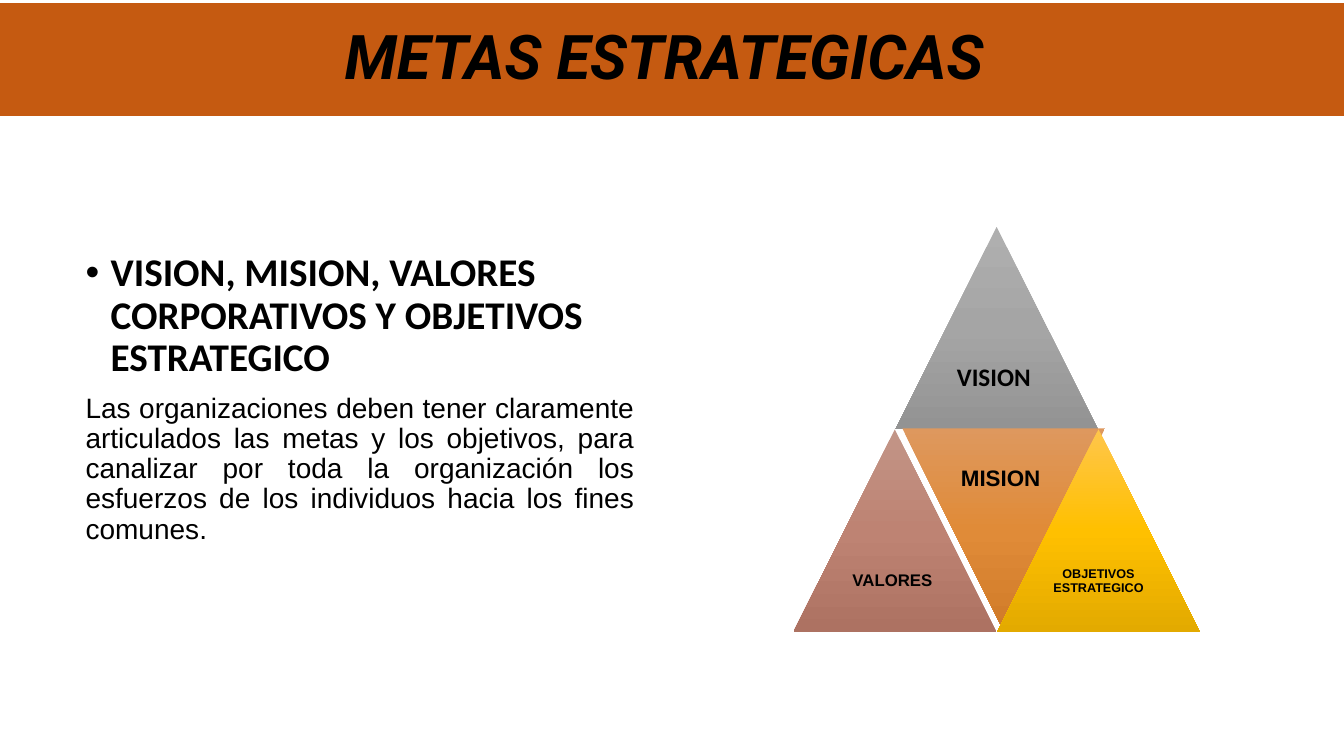
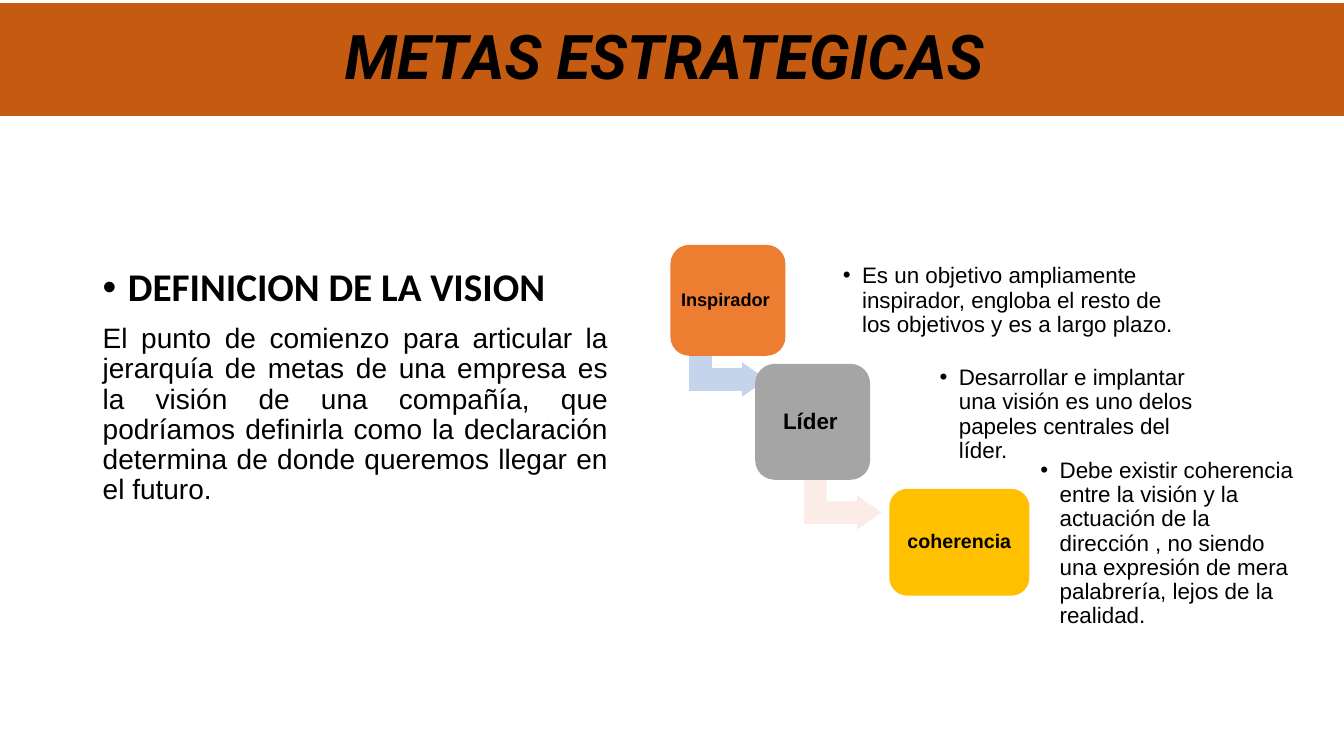
from lxml import etree
from pptx import Presentation
from pptx import util as u
from pptx.dml.color import RGBColor
from pptx.enum import shapes, text
from pptx.oxml import ns

Inches = u.Inches
SHAPE = shapes.MSO_SHAPE
LEFT, CENTER, JUSTIFY = text.PP_ALIGN.LEFT, text.PP_ALIGN.CENTER, text.PP_ALIGN.JUSTIFY
TOP, MIDDLE = text.MSO_ANCHOR.TOP, text.MSO_ANCHOR.MIDDLE
BLACK, WHITE, BAND = "000000", "FFFFFF", "C55A11"
ORANGE, GRAY, GOLD = "ED7D31", "A5A5A5", "FFC000"
TITLE = "METAS ESTRATEGICAS "

presentation = Presentation()
presentation.slide_width, presentation.slide_height = Inches(13.33), Inches(7.5)


def add_item(slide, box, kind=None, fill=None, adjustments=(), rotation=0):
    """Add a preset shape, or a text box when no kind is given."""
    frame = [Inches(value) for value in box]
    if kind is None:
        return slide.shapes.add_textbox(*frame)
    shape = slide.shapes.add_shape(kind, *frame)
    shape.shadow.inherit = False
    shape.line.fill.background()
    shape.rotation = rotation
    for index, value in enumerate(adjustments):
        shape.adjustments[index] = value
    if isinstance(fill, str):
        shape.fill.solid()
        shape.fill.fore_color.rgb = RGBColor.from_string(fill)
    elif fill:
        # Three-stop vertical gradient that stays upright on a turned shape
        shape.fill.gradient()
        gradient = shape._element.spPr.find(ns.qn("a:gradFill"))
        gradient.set("rotWithShape", "0")
        gradient.find(ns.qn("a:lin")).set("ang", "5400000")
        stops = gradient.find(ns.qn("a:gsLst"))
        for stop in list(stops):
            stops.remove(stop)
        for position, color in zip((0, 50000, 100000), fill):
            stop = etree.SubElement(stops, ns.qn("a:gs"), pos=str(position))
            etree.SubElement(stop, ns.qn("a:srgbClr"), val=color)
    return shape


def write(shape, paragraphs, anchor=MIDDLE, inset=None):
    """Paragraphs: (align, bullet indent, space before, runs);
    runs: (text, size, font, bold, italic, colour)."""
    frame = shape.text_frame
    frame.word_wrap = True
    frame.vertical_anchor = anchor
    if inset is not None:
        frame.margin_left = frame.margin_right = Inches(inset)
        frame.margin_top = frame.margin_bottom = Inches(inset)
    for index, (align, indent, before, runs) in enumerate(paragraphs):
        paragraph = frame.add_paragraph() if index else frame.paragraphs[0]
        paragraph.alignment = align
        paragraph.line_spacing = 0.9
        paragraph.space_before = u.Pt(before)
        if indent:
            properties = paragraph._p.get_or_add_pPr()
            properties.set("marL", str(Inches(indent)))
            properties.set("indent", str(-Inches(indent)))
            etree.SubElement(properties, ns.qn("a:buFont"), typeface="Arial")
            etree.SubElement(properties, ns.qn("a:buChar"), char="•")
        for words, size, font, bold, italic, color in runs:
            run = paragraph.add_run()
            run.text = words
            run.font.size, run.font.name = u.Pt(size), font
            run.font.bold, run.font.italic = bold, italic
            run.font.color.rgb = RGBColor.from_string(color)


# Shared parts: title band, bulleted heading and justified paragraph
pages = [
    ((0.75, 2.46, 5.64, 3.2),
     "VISION, MISION, VALORES CORPORATIVOS Y OBJETIVOS ESTRATEGICO",
     "Las organizaciones deben tener claramente articulados las metas y los objetivos, "
     "para canalizar por toda la organización los esfuerzos de los individuos hacia los "
     "fines comunes. "),
    ((0.92, 2.61, 5.21, 4.03),
     "DEFINICION DE LA VISION",
     "El punto de comienzo para articular la jerarquía de metas de una empresa es la "
     "visión de una compañía, que podríamos definirla como la declaración determina de "
     "donde queremos llegar en el futuro. "),
]
slides = []
for box, heading, body in pages:
    slide = presentation.slides.add_slide(presentation.slide_layouts[6])
    slides.append(slide)
    band = add_item(slide, (0, 0.03, 13.33, 1.12), SHAPE.RECTANGLE, BAND)
    write(band, [(CENTER, 0, 0, [(TITLE, 44, "Roboto", True, True, BLACK)])])
    write(add_item(slide, box), [
        (LEFT, 0.25, 10, [(heading, 28, "Calibri", True, False, BLACK)]),
        (JUSTIFY, 0, 10, [(body, 20, "Arial", False, False, BLACK)]),
    ], TOP)
pyramid_slide, steps_slide = slides

# Slide 1: pyramid of four triangles, each labelled in its wide half
SIDE = 2.01
triangles = [
    ("VISION ", 8.88, 2.25, 0, 18, "Calibri", 0.07, ("AFAFAF", "A5A5A5", "939393")),
    ("VALORES ", 7.87, 4.26, 0, 12, "Arial", 0.05, ("C29587", "BE8373", "AD7262")),
    ("MISION ", 8.95, 4.25, 180, 16, "Arial", 0.07, ("DE985E", "E08B38", "D07B29")),
    ("OBJETIVOS ESTRATEGICO ", 9.89, 4.26, 0, 9, "Arial", 0.04,
     ("FFC64B", "FFC000", "E3AA00")),
]
for label, left, top, rotation, size, font, inset, colors in triangles:
    add_item(pyramid_slide, (left, top, SIDE, SIDE), SHAPE.ISOSCELES_TRIANGLE,
             colors, rotation=rotation)
    label_top = top if rotation else top + SIDE / 2
    label_box = add_item(pyramid_slide, (left + SIDE / 4, label_top, SIDE / 2, SIDE / 2))
    write(label_box, [(CENTER, 0, 0, [(label, size, font, True, False, BLACK)])],
          inset=inset)

# Slide 2: descending steps, each with a description and an arrow to the next
steps = [
    ((6.65, 2.43, 1.14, 1.1), ORANGE, 0.05,
     [("Inspirador ", 13, "Arial", True, False, BLACK)],
     (8.29, 2.66, 3.61, 0.65),
     "Es un objetivo ampliamente inspirador, engloba el resto de los objetivos y es a "
     "largo plazo.", (6.88, 3.21), "C4D5EB"),
    ((7.49, 3.61, 1.14, 1.15), GRAY, 0.07,
     [("Líder", 16, "Arial", True, False, BLACK),
      (" ", 14, "Calibri", False, False, WHITE)],
     (9.25, 3.79, 2.7, 0.65),
     "Desarrollar e implantar una visión es uno delos papeles centrales del líder.",
     (8.02, 4.53), "FCECE8"),
    ((8.82, 4.85, 1.39, 1.06), GOLD, 0.06,
     [("coherencia", 14, "Arial", True, False, BLACK)],
     (10.25, 4.7, 2.7, 1.39),
     "Debe existir coherencia entre la visión y la actuación de la dirección , no siendo "
     "una expresión de mera palabrería, lejos de la realidad.", None, None),
]
for box, color, inset, runs, note_box, note, arrow_corner, arrow_color in steps:
    if arrow_corner:
        add_item(steps_slide, (*arrow_corner, 0.68, 0.77), SHAPE.BENT_UP_ARROW,
                 arrow_color, (0.33, 0.25, 0.36), 90)
    step = add_item(steps_slide, box, SHAPE.ROUNDED_RECTANGLE, color, (0.17,))
    write(step, [(CENTER, 0, 0, runs)], inset=inset)
    write(add_item(steps_slide, note_box),
          [(LEFT, 0.19, 0, [(note, 16, "Arial", False, False, BLACK)])], inset=0.07)

presentation.save("out.pptx")
